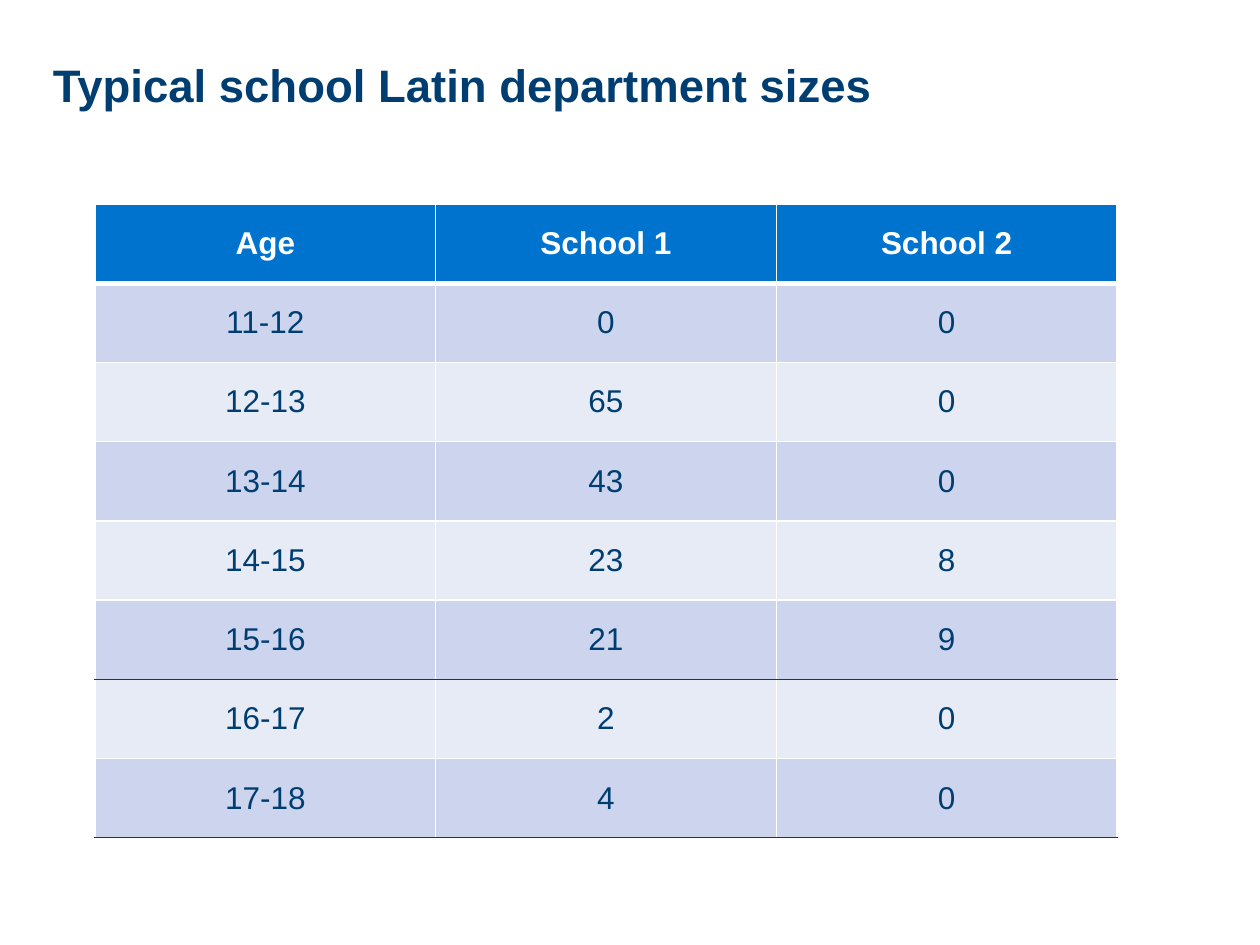
from dataclasses import dataclass

import pptx
import pptx.dml.color
import pptx.enum.text
import pptx.oxml
import pptx.oxml.ns
import pptx.util

EMU_PER_PX = 914400 // 126


@dataclass(frozen=True)
class Theme:
    font: str = "Arial"
    navy: str = "003E72"
    header: str = "0073CF"
    white: str = "FFFFFF"
    bands: tuple[str, str] = ("CCD5ED", "E7EBF6")
    title_size: int = 26
    table_size: int = 18


@dataclass(frozen=True)
class Rule:
    color: str
    points: int = 1


@dataclass(frozen=True)
class TableRow:
    texts: tuple[str, str, str]
    below: Rule


THEME = Theme()
PLAIN = Rule(THEME.white)
HEADER_RULE = Rule(THEME.white, 3)
DARK = Rule(THEME.navy)

ROWS = (
    TableRow(("Age", "School 1", "School 2"), HEADER_RULE),
    TableRow(("11-12", "0", "0"), PLAIN),
    TableRow(("12-13", "65", "0"), PLAIN),
    TableRow(("13-14", "43", "0"), PLAIN),
    TableRow(("14-15", "23", "8"), PLAIN),
    TableRow(("15-16", "21", "9"), DARK),
    TableRow(("16-17", "2", "0"), PLAIN),
    TableRow(("17-18", "4", "0"), DARK),
)


def px(length: int) -> pptx.util.Emu:
    return pptx.util.Emu(length * EMU_PER_PX)


def rgb(color: str) -> pptx.dml.color.RGBColor:
    return pptx.dml.color.RGBColor.from_string(color)


def add_run(paragraph, text: str, size: int, color: str, bold: bool) -> None:
    run = paragraph.add_run()
    run.text = text
    run.font.name = THEME.font
    run.font.size = pptx.util.Pt(size)
    run.font.bold = bold
    run.font.color.rgb = rgb(color)


def add_title(slide, text: str) -> None:
    shape = slide.shapes.add_textbox(px(53), px(55), px(1154), px(58))
    frame = shape.text_frame
    frame.word_wrap = True
    frame.margin_left = frame.margin_right = 0
    frame.margin_top = frame.margin_bottom = 0
    frame.vertical_anchor = pptx.enum.text.MSO_ANCHOR.MIDDLE
    add_run(frame.paragraphs[0], text, THEME.title_size, THEME.navy, True)


def add_borders(cell, above: Rule, below: Rule) -> None:
    """Must run before the cell is filled, as borders precede the fill in the XML."""
    properties = cell._tc.get_or_add_tcPr()
    namespace = pptx.oxml.ns.nsdecls("a")
    for side, rule in (("L", PLAIN), ("R", PLAIN), ("T", above), ("B", below)):
        properties.append(pptx.oxml.parse_xml(
            f'<a:ln{side} {namespace} w="{pptx.util.Pt(rule.points)}">'
            f'<a:solidFill><a:srgbClr val="{rule.color}"/></a:solidFill></a:ln{side}>'
        ))


def fill_cell(cell, text: str, fill: str, color: str, bold: bool) -> None:
    cell.fill.solid()
    cell.fill.fore_color.rgb = rgb(fill)
    cell.vertical_anchor = pptx.enum.text.MSO_ANCHOR.MIDDLE
    paragraph = cell.text_frame.paragraphs[0]
    paragraph.alignment = pptx.enum.text.PP_ALIGN.CENTER
    add_run(paragraph, text, THEME.table_size, color, bold)


def add_size_table(slide, rows: tuple[TableRow, ...]) -> None:
    table = slide.shapes.add_table(
        len(rows), len(rows[0].texts), px(95), px(204), px(1022), px(634)
    ).table
    above = PLAIN
    for row_index, row in enumerate(rows):
        is_header = row_index == 0
        fill = THEME.header if is_header else THEME.bands[(row_index - 1) % 2]
        color = THEME.white if is_header else THEME.navy
        for column_index, text in enumerate(row.texts):
            cell = table.cell(row_index, column_index)
            add_borders(cell, above, row.below)
            fill_cell(cell, text, fill, color, is_header)
        above = row.below


def main() -> None:
    presentation = pptx.Presentation()
    presentation.slide_width = pptx.util.Inches(10)
    presentation.slide_height = pptx.util.Inches(7.5)
    slide = presentation.slides.add_slide(presentation.slide_layouts[6])
    add_title(slide, "Typical school Latin department sizes")
    add_size_table(slide, ROWS)
    presentation.save("out.pptx")


if __name__ == "__main__":
    main()
